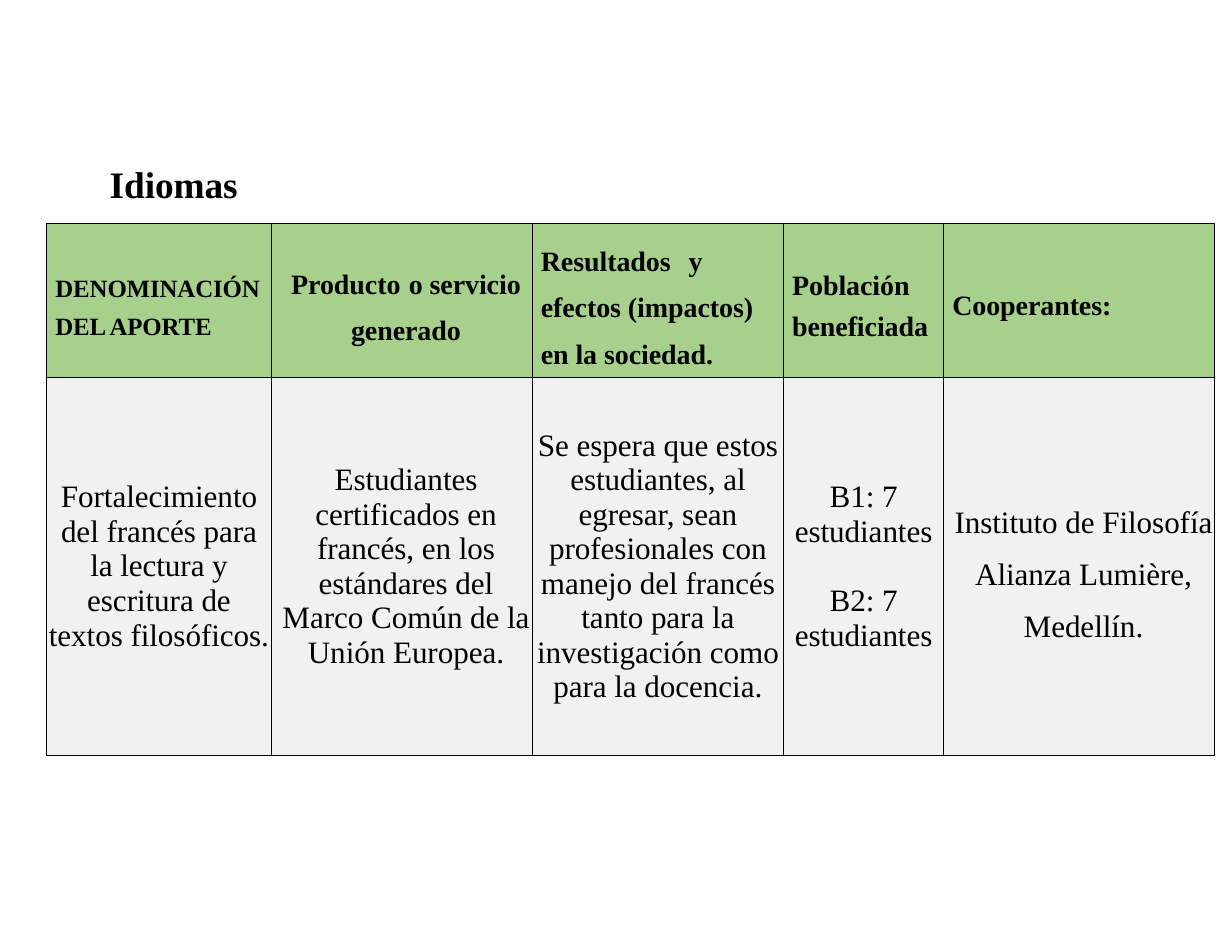
"""Build the slide on language contributions: a title above a five-column table."""
from lxml.etree import SubElement
from pptx import Presentation
from pptx.dml.color import RGBColor
from pptx.enum.text import MSO_ANCHOR, MSO_AUTO_SIZE, PP_ALIGN
from pptx.oxml.ns import qn
from pptx.util import Inches, Pt

THEME = {
    "font": "Times New Roman", "ink": "000000", "head": "A8D08D", "body": "F1F1F1",
    "title": 24, "small": 16, "label": 18, "text": 20, "track": "-5",
}
LEFT, MID = PP_ALIGN.LEFT, PP_ALIGN.CENTER

deck = Presentation()
deck.slide_width, deck.slide_height = Inches(11), Inches(8.5)
col, row = deck.slide_width / 100, deck.slide_height / 100
slide = deck.slides.add_slide(deck.slide_layouts[5])


def style(para, size, bold, align):
    para.alignment = align
    for run in para.runs:
        font = run.font
        font.name, font.size, font.bold = THEME["font"], Pt(size), bold
        font.color.rgb = RGBColor.from_string(THEME["ink"])
        run._r.get_or_add_rPr().set("spc", THEME["track"])


def frame(cell):
    props = cell._tc.get_or_add_tcPr()
    for side in ("lnL", "lnR", "lnT", "lnB"):
        line = SubElement(props, qn(f"a:{side}"), w=str(Pt(0.5)))
        fill = SubElement(line, qn("a:solidFill"))
        SubElement(fill, qn("a:srgbClr"), val=THEME["ink"])


title = slide.shapes.title
title.left, title.top = int(8.9 * col), int(16.8 * row)
title.width, title.height = int(12 * col), int(5 * row)
box = title.text_frame
box.text = "Idiomas"
box.margin_left = box.margin_right = box.margin_top = box.margin_bottom = 0
box.auto_size, box.vertical_anchor = MSO_AUTO_SIZE.NONE, MSO_ANCHOR.MIDDLE
style(box.paragraphs[0], THEME["title"], True, LEFT)

small, label, text = THEME["small"], THEME["label"], THEME["text"]
tight = Pt(13.8)
rows = [
    [
        (["DENOMINACIÓN", "DEL APORTE"], small, LEFT, 0.7, tight, 6.3, []),
        (["Producto\to servicio generado"], label, MID, 0.7, 1.5, 0, [1.05, 1.44]),
        (["Resultados\ty efectos (impactos) en la sociedad."], label, LEFT, 0.7, 1.5, 0, [1.32]),
        (["Población", "beneficiada"], label, LEFT, 0.7, tight, 6.3, []),
        (["Cooperantes:"], label, LEFT, 0.7, tight, 0, []),
    ],
    [
        (["Fortalecimiento del francés para la lectura y escritura de textos filosóficos."],
         text, MID, 0, 1, 0, []),
        (["Estudiantes certificados en francés, en los estándares del Marco Común "
          "de la Unión Europea."], text, MID, 0.7, 1, 0, []),
        (["Se espera que estos estudiantes, al egresar, sean profesionales con manejo "
          "del francés tanto para la investigación como para la docencia."],
         text, MID, 0, 1, 0, []),
        (["B1: 7 estudiantes", "B2: 7 estudiantes"], text, MID, 0, 1, 22.5, []),
        (["Instituto de Filosofía Alianza Lumière, Medellín."], text, MID, 0.7, 1.5, 0, []),
    ],
]
wides, talls = [18.2, 21.2, 20.4, 13, 22], [16.1, 39.8]

shape = slide.shapes.add_table(
    len(rows), len(wides), int(3.8 * col), int(23.5 * row),
    int(sum(wides) * col), int(sum(talls) * row))
table = shape.table
table.first_row = table.horz_banding = False
for part, wide in zip(table.columns, wides):
    part.width = int(wide * col)
for part, tall in zip(table.rows, talls):
    part.height = int(tall * row)

for r, (cells, color) in enumerate(zip(rows, (THEME["head"], THEME["body"]))):
    for c, (lines, size, align, inset, space, gap, tabs) in enumerate(cells):
        cell = table.cell(r, c)
        cell.margin_left, cell.margin_right, cell.margin_bottom = int(inset * col), 0, 0
        cell.margin_top = tight if space == tight else 0
        cell.vertical_anchor = MSO_ANCHOR.MIDDLE
        frame(cell)
        cell.fill.solid()
        cell.fill.fore_color.rgb = RGBColor.from_string(color)
        cell.text_frame.text = "\n".join(lines)
        for n, para in enumerate(cell.text_frame.paragraphs):
            para.line_spacing = 1 if n else space
            para.space_before = Pt(gap if n else 0)
            if tabs:
                stops = SubElement(para._p.get_or_add_pPr(), qn("a:tabLst"))
                for stop in tabs:
                    SubElement(stops, qn("a:tab"), pos=str(Inches(stop)), algn="l")
            style(para, size, r == 0, align)

deck.save("out.pptx")
